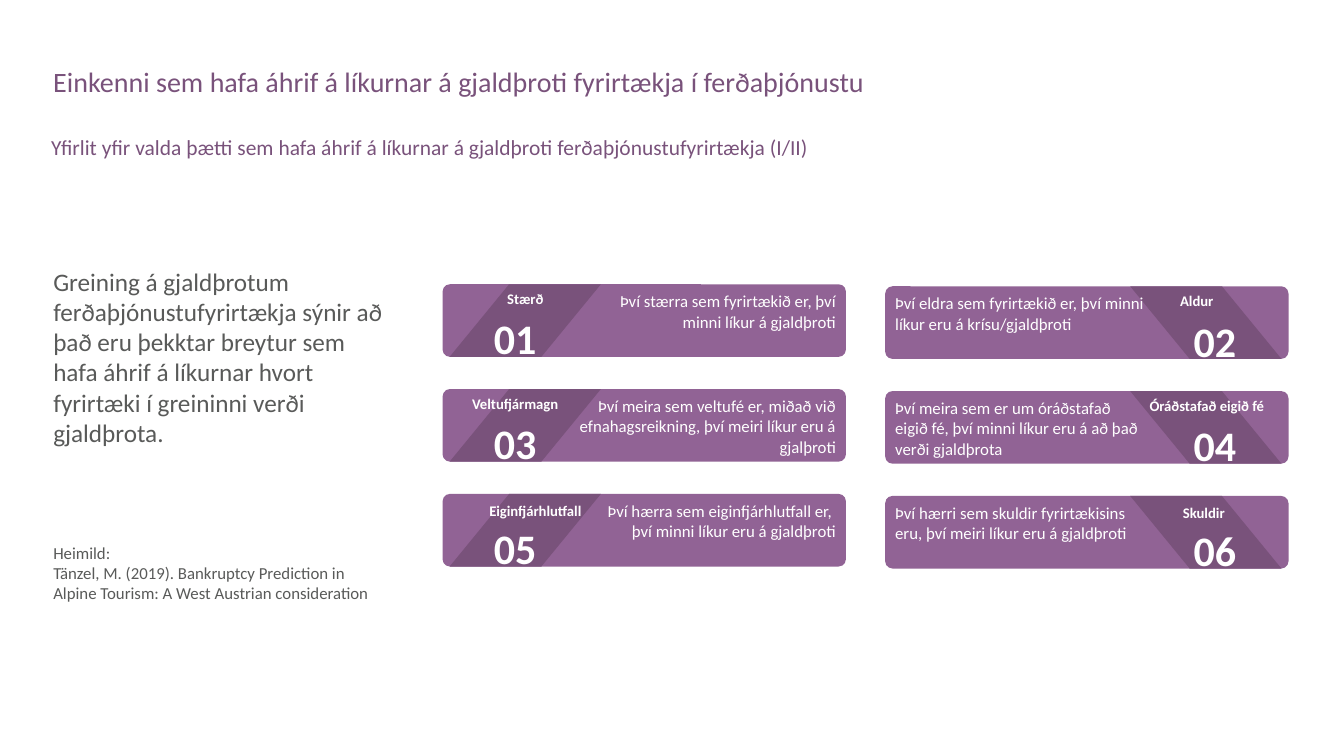
from pptx import Presentation
from pptx.dml.color import RGBColor
from pptx.enum.shapes import MSO_SHAPE
from pptx.enum.text import MSO_ANCHOR, PP_ALIGN
from pptx.util import Inches, Pt

PURPLE, DARK, GREY, WHITE = "916395", "79527B", "595A59", "FFFFFF"

prs = Presentation()
prs.slide_width, prs.slide_height = Inches(13.33), Inches(7.5)
s = prs.slides.add_slide(prs.slide_layouts[6])


def paint(sp, color):
    sp.fill.solid()
    sp.fill.fore_color.rgb = RGBColor.from_string(color)
    sp.line.fill.background()
    sp.shadow.inherit = False


def add_text(x, y, w, h, paragraphs, color, align=PP_ALIGN.LEFT, bold=False,
             anchor=MSO_ANCHOR.TOP, spacing=None, gap=0, inset=True):
    """Place a text box; paragraphs is a list of (text, size)."""
    tf = s.shapes.add_textbox(Inches(x), Inches(y), Inches(w), Inches(h)).text_frame
    tf.word_wrap = True
    tf.vertical_anchor = anchor
    if not inset:
        tf.margin_left = tf.margin_right = tf.margin_top = tf.margin_bottom = 0
    for i, (text, size) in enumerate(paragraphs):
        p = tf.paragraphs[0] if i == 0 else tf.add_paragraph()
        p.alignment = align
        if spacing:
            p.line_spacing = spacing
        if i:
            p.space_before = Pt(gap)
        for j, line in enumerate(text.split("\n")):
            if j:
                p.add_line_break()
            r = p.add_run()
            r.text = line
            r.font.name, r.font.size, r.font.bold = "Calibri", Pt(size), bold
            r.font.color.rgb = RGBColor.from_string(color)


# Headings
add_text(0.43, 0.63, 12.54, 0.64,
         [("Einkenni sem hafa áhrif á líkurnar á gjaldþroti fyrirtækja í ferðaþjónustu", 20)],
         DARK, spacing=0.9)
add_text(0.41, 1.35, 12.56, 0.28,
         [("Yfirlit yfir valda þætti sem hafa áhrif á líkurnar á gjaldþroti "
           "ferðaþjónustufyrirtækja (I/II)", 15.3)],
         DARK, spacing=0.7)

# Introduction and reference
add_text(0.43, 1.79, 3.49, 5.04,
         [("Greining á gjaldþrotum ferðaþjónustufyrirtækja sýnir að það eru þekktar "
           "breytur sem hafa áhrif á líkurnar hvort fyrirtæki í greininni verði gjaldþrota.", 18),
          ("Heimild:\nTänzel, M. (2019). Bankruptcy Prediction in Alpine Tourism: "
           "A West Austrian consideration", 12)],
         GREY, anchor=MSO_ANCHOR.MIDDLE, gap=68)

# Factor cards: label, label centre, description, description width
factors = [
    ("Stærð", 5.21, "Því stærra sem fyrirtækið er, því minni líkur á gjaldþroti", 2.72),
    ("Aldur", 11.87, "Því eldra sem fyrirtækið er, því minni líkur eru á krísu/gjaldþroti", 2.69),
    ("Veltufjármagn", 5.11, "Því meira sem veltufé er, miðað við efnahagsreikning, "
     "því meiri líkur eru á gjalþroti", 2.87),
    ("Óráðstafað eigið fé", 11.97, "Því meira sem er um óráðstafað eigið fé, "
     "því minni líkur eru á að það verði gjaldþrota", 2.69),
    ("Eiginfjárhlutfall", 5.31, "Því hærra sem eiginfjárhlutfall er, \n"
     "því minni líkur eru á gjaldþroti", 2.72),
    ("Skuldir", 11.94, "Því hærri sem skuldir fyrirtækisins eru, "
     "því meiri líkur eru á gjaldþroti", 2.69),
]
CARD_W, CARD_H, ROW_STEP = 4, 0.72, 1.04
LABEL_W, NUMBER_W = 1.84, 0.46
columns = [(4.39, 2.82), (8.78, 2.84)]

for i, (label, label_mid, description, text_w) in enumerate(factors):
    row, col = divmod(i, 2)
    x, y = columns[col][0], columns[col][1] + row * ROW_STEP

    card = s.shapes.add_shape(MSO_SHAPE.ROUNDED_RECTANGLE, Inches(x), Inches(y),
                              Inches(CARD_W), Inches(CARD_H))
    card.adjustments[0] = 0.1
    paint(card, PURPLE)

    # Slanted band, mirrored in the right column
    corners = [(1.57, 0), (0.66, 0), (0.07, CARD_H), (0.98, CARD_H)]
    band = [(Inches(x + (CARD_W - dx if col else dx)), Inches(y + dy)) for dx, dy in corners]
    fb = s.shapes.build_freeform(*band[0])
    fb.add_line_segments(band[1:], close=True)
    paint(fb.convert_to_shape(), DARK)

    add_text(label_mid - LABEL_W / 2, y + (0.03 if row == 2 else 0.01), LABEL_W, 0.28,
             [(label, 10.5)], WHITE, PP_ALIGN.CENTER, bold=True)
    number_mid = CARD_W - 0.73 if col else 0.72
    add_text(x + number_mid - NUMBER_W / 2, y + 0.28, NUMBER_W, 0.51,
             [(f"{i + 1:02}", 30)], WHITE, PP_ALIGN.CENTER, bold=True,
             anchor=MSO_ANCHOR.MIDDLE, inset=False)
    add_text(x if col else x + CARD_W - text_w, y + 0.02, text_w, 0.5,
             [(description, 12)], WHITE, PP_ALIGN.LEFT if col else PP_ALIGN.RIGHT)

prs.save("out.pptx")
